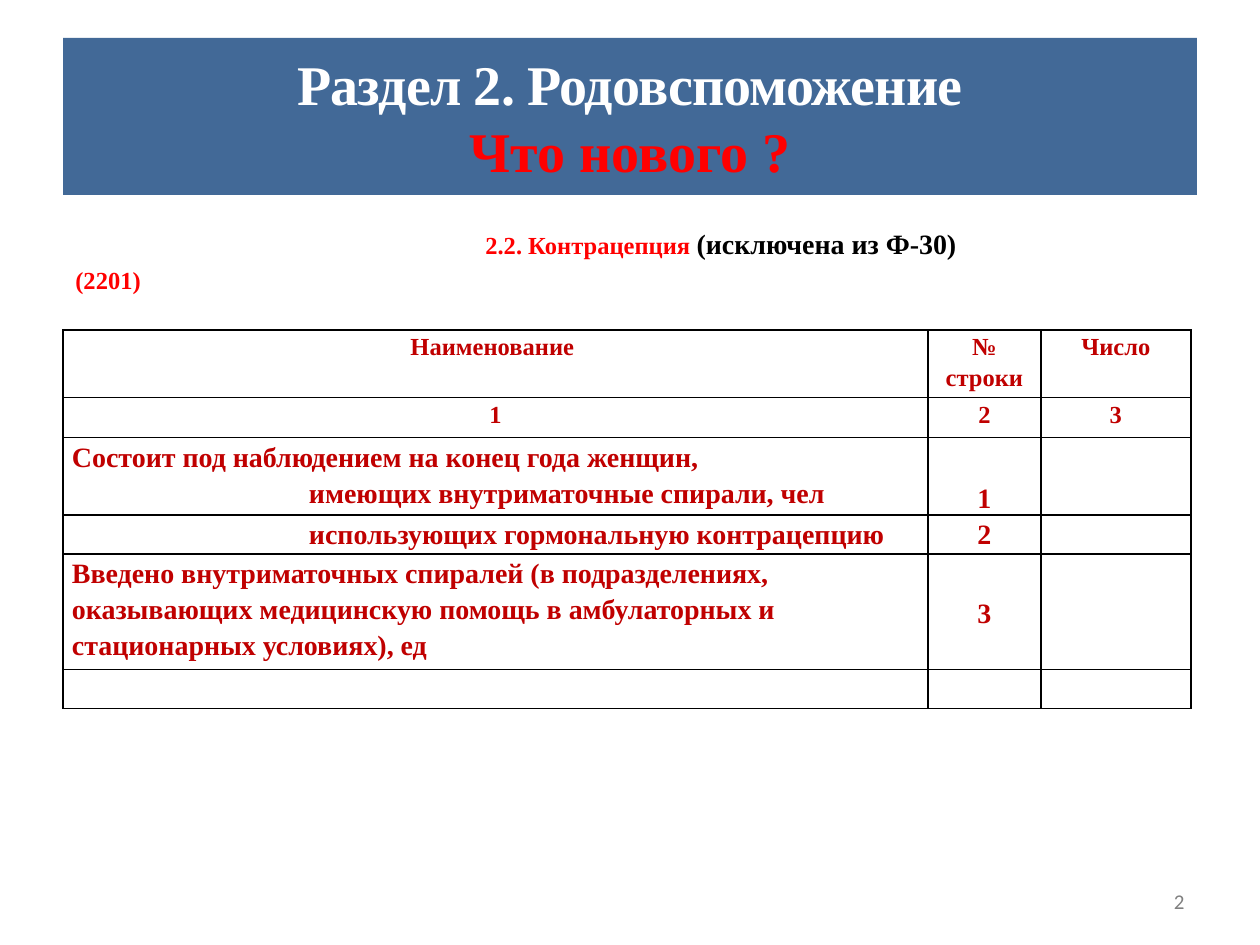
import copy

import lxml.etree
import pptx
import pptx.dml.color
import pptx.enum.text
import pptx.oxml.ns
import pptx.util

PX = 914400 // 126
SERIF = "Times New Roman"
RED, DARK_RED = "FF0000", "C00000"
ALIGN = pptx.enum.text.PP_ALIGN
ANCHOR = pptx.enum.text.MSO_ANCHOR
qn = pptx.oxml.ns.qn


def px(n):
    return pptx.util.Emu(n * PX)


def rgb(value):
    return pptx.dml.color.RGBColor.from_string(value)


def add_text(p, text, size=16, color=DARK_RED, bold=True, font=SERIF, spacing=0):
    """Add runs to a paragraph; each newline becomes a line break."""
    for i, line in enumerate(text.split("\n")):
        if i:
            br = lxml.etree.SubElement(p._p, qn("a:br"))
            br.append(copy.deepcopy(r._r.rPr))
        if not line:
            continue
        r = p.add_run()
        r.text = line
        r.font.size = pptx.util.Pt(size)
        r.font.name = font
        r.font.bold = bold
        r.font.color.rgb = rgb(color)
        if spacing:
            r._r.rPr.set("spc", str(int(spacing * 100)))


def indent(p, n):
    p._p.get_or_add_pPr().set("marL", str(px(n)))


def place(sp, box):
    sp.left, sp.top, sp.width, sp.height = map(px, box)


def add_title(s, box):
    sp = s.shapes.title
    place(sp, box)
    sp.fill.solid()
    sp.fill.fore_color.rgb = rgb("426997")
    tf = sp.text_frame
    tf.vertical_anchor = ANCHOR.MIDDLE
    p = tf.paragraphs[0]
    p.alignment = ALIGN.CENTER
    add_text(p, "Раздел 2. Родовспоможение\n", size=32, color="FFFFFF", spacing=-0.5)
    add_text(p, "Что нового ?", size=32, color=RED)


def add_caption(s, box):
    tf = s.shapes.add_textbox(*map(px, box)).text_frame
    tf.word_wrap = True
    heading, code = tf.paragraphs[0], tf.add_paragraph()
    for p in (heading, code):
        p.space_before = pptx.util.Pt(3)
    indent(heading, 410)
    add_text(heading, "2.2. Контрацепция ", size=14, color=RED)
    add_text(heading, "(исключена из Ф-30)", color="000000")
    add_text(code, "(2201)", size=14, color=RED)


def add_borders(cell, color="000000", width=1):
    tcPr = cell._tc.get_or_add_tcPr()
    for side in ("lnL", "lnR", "lnT", "lnB"):
        ln = lxml.etree.SubElement(tcPr, qn("a:" + side), w=str(pptx.util.Pt(width)))
        fill = lxml.etree.SubElement(ln, qn("a:solidFill"))
        lxml.etree.SubElement(fill, qn("a:srgbClr"), val=color)


def fill_cell(cell, lines, size, centered, anchor):
    """Write (text, indent) lines into a bordered cell."""
    add_borders(cell)
    cell.fill.background()
    cell.margin_left = cell.margin_right = px(9)
    cell.margin_top = cell.margin_bottom = 0
    cell.vertical_anchor = anchor
    tf = cell.text_frame
    for i, (text, left) in enumerate(lines):
        p = tf.add_paragraph() if i else tf.paragraphs[0]
        p.line_spacing = 1.15
        p.alignment = ALIGN.CENTER if centered else ALIGN.LEFT
        if left:
            indent(p, left)
        add_text(p, text, size=size)


def add_indicator_table(s, left, top):
    widths = (865, 113, 150)
    sub = 237  # indent of the sub-items
    # height, name lines, row number, value heading, anchor of the row number
    rows = [
        (62, [("Наименование ", 0)], "№\nстроки", "Число", ANCHOR.TOP),
        (40, [("1", 0)], "2", "3", ANCHOR.TOP),
        (71, [("Состоит под наблюдением на конец года женщин,", 0),
              ("имеющих внутриматочные спирали, чел", sub)], "1", "", ANCHOR.BOTTOM),
        (39, [("использующих гормональную контрацепцию", sub)], "2", "", ANCHOR.TOP),
        (108, [("Введено внутриматочных спиралей (в подразделениях, оказывающих "
                "медицинскую помощь в амбулаторных и стационарных условиях), ед", 0)],
         "3", "", ANCHOR.MIDDLE),
        (39, [], "", "", ANCHOR.TOP),
    ]
    height = sum(row[0] for row in rows)
    table = s.shapes.add_table(len(rows), len(widths), px(left), px(top),
                               px(sum(widths)), px(height)).table
    table.first_row = table.horz_banding = False
    for column, width in zip(table.columns, widths):
        column.width = px(width)
    for i, (height, names, number, value, anchor) in enumerate(rows):
        table.rows[i].height = px(height)
        heading = i < 2
        size = 14 if heading else 16
        fill_cell(table.cell(i, 0), names, size, heading, ANCHOR.TOP)
        for j, text in enumerate((number, value), 1):
            lines = [(text, 0)] if text else []
            fill_cell(table.cell(i, j), lines, size, True, anchor)


def add_slide_number(s, box):
    tf = s.shapes.add_textbox(*map(px, box)).text_frame
    tf.word_wrap = True
    tf.vertical_anchor = ANCHOR.MIDDLE
    p = tf.paragraphs[0]
    p.alignment = ALIGN.RIGHT
    add_text(p, "2", size=12, color="808080", bold=False, font="Calibri")


def main():
    prs = pptx.Presentation()
    prs.slide_width, prs.slide_height = px(1260), px(945)
    s = prs.slides.add_slide(prs.slide_layouts[5])
    add_title(s, (63, 38, 1134, 157))
    add_caption(s, (63, 220, 1134, 90))
    add_indicator_table(s, 63, 330)
    add_slide_number(s, (903, 876, 294, 50))
    prs.save("out.pptx")


if __name__ == "__main__":
    main()
